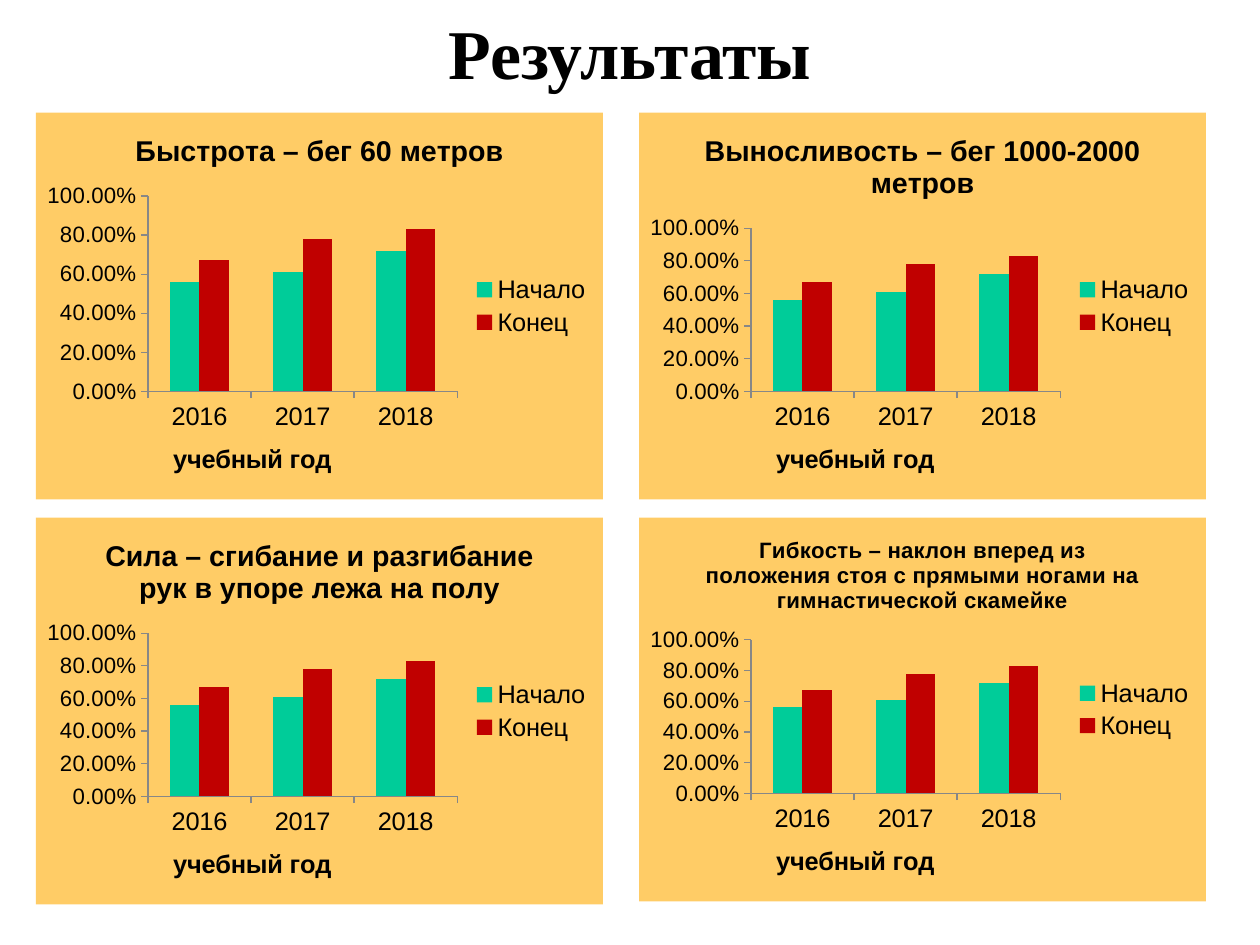
from lxml import etree
from pptx import Presentation
from pptx.chart.data import CategoryChartData
from pptx.dml.color import RGBColor
from pptx.enum.chart import XL_CHART_TYPE as ChartType
from pptx.enum.chart import XL_LEGEND_POSITION as LegendPosition
from pptx.enum.chart import XL_TICK_MARK as TickMark
from pptx.enum.text import MSO_ANCHOR, PP_ALIGN
from pptx.oxml import parse_xml
from pptx.oxml.ns import nsdecls, qn
from pptx.util import Cm, Pt

COLORS = {
    "text": "000000",
    "panel": "FFCC66",
    "axis": "878787",
    "Начало": "00CC99",
    "Конец": "C00000",
}
YEARS = ["2016", "2017", "2018"]
RESULTS = {
    "Начало": [0.56, 0.61, 0.72],
    "Конец": [0.67, 0.78, 0.83],
}
# Chart title, title size in points, panel height in cm
PANELS = [
    ("Быстрота – бег 60 метров", 18, 8.6),
    ("Выносливость – бег 1000-2000 метров", 18, 8.6),
    ("Сила – сгибание и разгибание рук в упоре лежа на полу", 18, 8.6),
    ("Гибкость – наклон вперед из положения стоя с прямыми ногами "
     "на гимнастической скамейке", 14, 8.53),
]
GRID_LEFT, GRID_TOP = 0.8, 2.5
COLUMN_STEP, ROW_STEP = 13.4, 9.0
PANEL_WIDTH = 12.6


def color(name):
    return RGBColor.from_string(COLORS[name])


def format_font(font, size, bold=False, name="Arial"):
    font.name = name
    font.size = Pt(size)
    font.bold = bold
    font.color.rgb = color("text")


def set_chart_title(owner, text, size):
    """Give a chart or an axis a bold title."""
    text_frame = (owner.chart_title if hasattr(owner, "chart_title")
                  else owner.axis_title).text_frame
    text_frame.text = text
    format_font(text_frame.paragraphs[0].runs[0].font, size, bold=True)


def fill_chart_area(chart):
    properties = parse_xml(f"<c:spPr {nsdecls('c', 'a')}/>")
    fill = etree.SubElement(properties, qn("a:solidFill"))
    etree.SubElement(fill, qn("a:srgbClr"), val=COLORS["panel"])
    line = etree.SubElement(properties, qn("a:ln"))
    etree.SubElement(line, qn("a:noFill"))
    chart.element.find(qn("c:chart")).addnext(properties)


def format_axis(axis, label_size):
    axis.has_major_gridlines = False
    axis.major_tick_mark = TickMark.OUTSIDE
    axis.minor_tick_mark = TickMark.NONE
    axis.format.line.color.rgb = color("axis")
    axis.format.line.width = Pt(0.75)
    format_font(axis.tick_labels.font, label_size)


def add_title(slide, left, top, width, height):
    title = slide.shapes.title
    title.left, title.top, title.width, title.height = left, top, width, height
    text_frame = title.text_frame
    text_frame.text = "Результаты"
    text_frame.vertical_anchor = MSO_ANCHOR.MIDDLE
    text_frame.margin_left = text_frame.margin_right = 0
    text_frame.margin_top = text_frame.margin_bottom = 0
    paragraph = text_frame.paragraphs[0]
    paragraph.alignment = PP_ALIGN.CENTER
    paragraph.line_spacing = 0.93
    format_font(paragraph.runs[0].font, 44, True, "Times New Roman")


def add_result_chart(slide, left, top, width, height, title, title_size):
    data = CategoryChartData(number_format="0.00%")
    data.categories = YEARS
    for name, values in RESULTS.items():
        data.add_series(name, values)
    chart = slide.shapes.add_chart(
        ChartType.COLUMN_CLUSTERED, left, top, width, height, data).chart
    format_font(chart.font, 10)
    fill_chart_area(chart)
    set_chart_title(chart, title, title_size)
    chart.chart_title.include_in_layout = False

    plot = chart.plots[0]
    plot.gap_width = 150
    plot.overlap = 0
    plot.vary_by_categories = False
    for series in plot.series:
        series.format.fill.solid()
        series.format.fill.fore_color.rgb = color(series.name)

    format_axis(chart.category_axis, 16)
    set_chart_title(chart.category_axis, "учебный год", 16)
    value_axis = chart.value_axis
    format_axis(value_axis, 14)
    value_axis.minimum_scale, value_axis.maximum_scale = 0, 1
    value_axis.major_unit = 0.2
    value_axis.tick_labels.number_format = "0.00%"
    value_axis.tick_labels.number_format_is_linked = False

    chart.has_legend = True
    chart.legend.position = LegendPosition.RIGHT
    chart.legend.include_in_layout = False
    format_font(chart.legend.font, 16)


def main():
    presentation = Presentation()
    presentation.slide_width, presentation.slide_height = Cm(28), Cm(21)
    slide = presentation.slides.add_slide(presentation.slide_layouts[5])
    add_title(slide, Cm(1.4), Cm(0), Cm(25.2), Cm(2.5))
    for index, (title, title_size, height) in enumerate(PANELS):
        row, column = divmod(index, 2)
        add_result_chart(
            slide,
            Cm(GRID_LEFT + column * COLUMN_STEP),
            Cm(GRID_TOP + row * ROW_STEP),
            Cm(PANEL_WIDTH), Cm(height), title, title_size)
    presentation.save("out.pptx")


if __name__ == "__main__":
    main()
